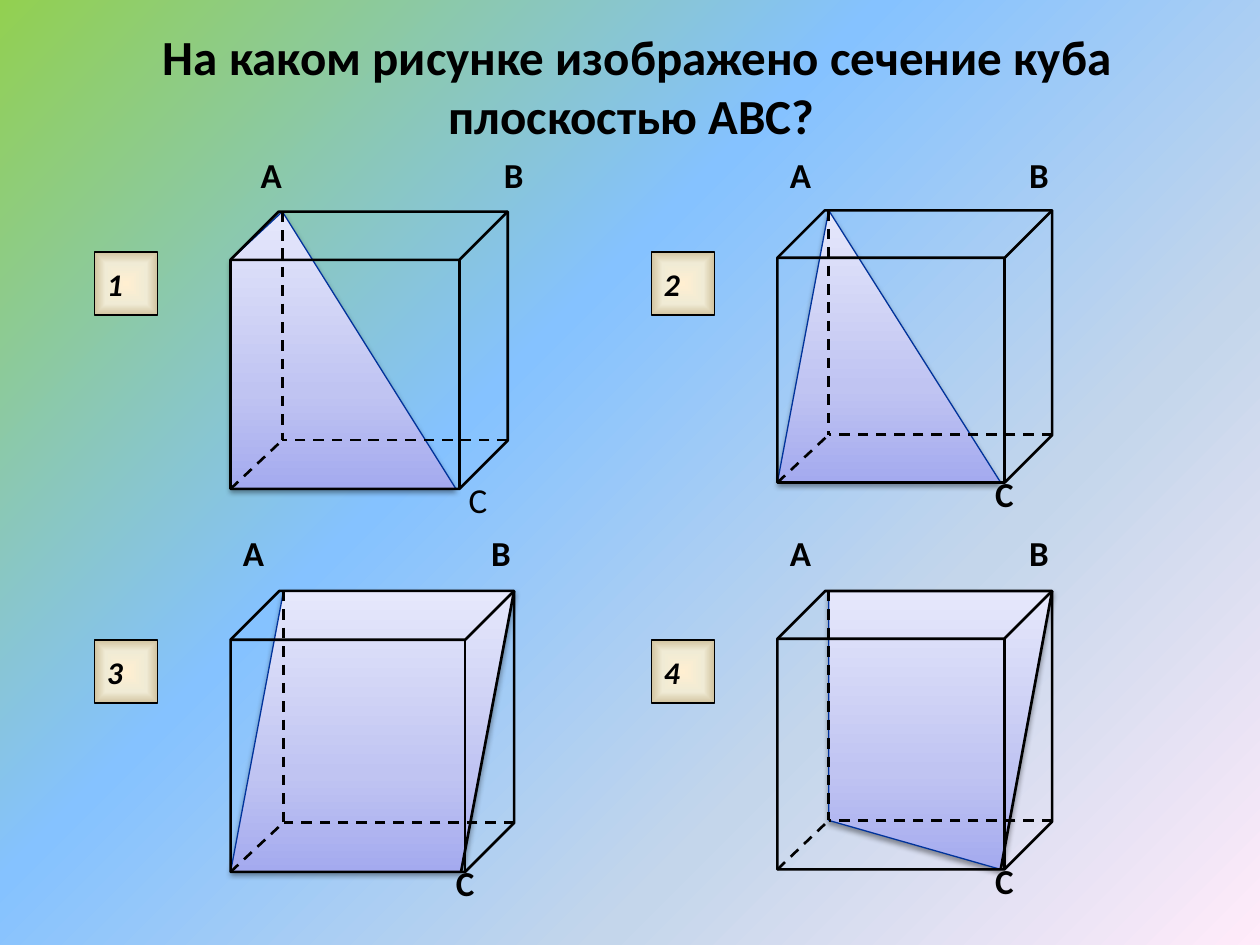
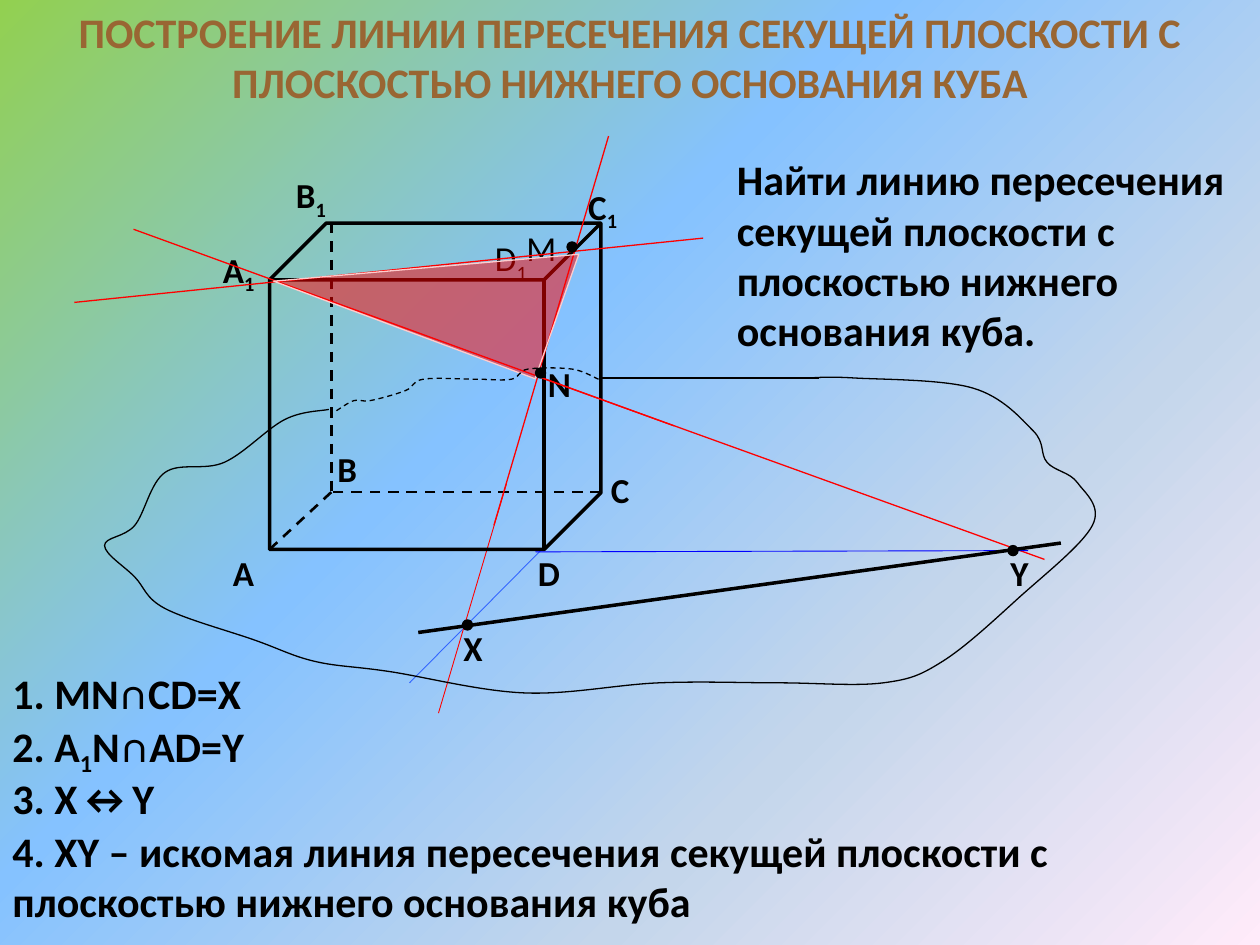
from dataclasses import dataclass
from typing import Iterable, NamedTuple, Optional

import pptx
import pptx.dml.color
import pptx.enum.dml
import pptx.enum.shapes
import pptx.enum.text
import pptx.oxml.ns
import pptx.util
from lxml import etree

Inches = pptx.util.Inches
Pt = pptx.util.Pt
qn = pptx.oxml.ns.qn
MSO = pptx.enum.shapes.MSO_SHAPE
ALIGN = pptx.enum.text.PP_ALIGN

FONT = "Calibri"
COLORS = {
    "ink": "000000", "brown": "996633", "red": "FF0000", "pink": "FFCCCC",
    "blue": "0000FF", "sky": "3366FF", "navy": "00339B",
}
PAGE = [(0, "92D050"), (40, "85C2FF"), (70, "C4D6EB"), (100, "FFEBFA")]
LILAC = [(0, "A4AAEF"), (35, "C0C4F2"), (100, "E6E8FB")]
SAND = [(0, "FFEFD1"), (65, "F0EBD5"), (100, "D1C39F")]


class Point(NamedTuple):
    x: float
    y: float


class Label(NamedTuple):
    text: str
    x: float
    y: float
    bold: bool = True
    width: float = 0.82


class Stroke(NamedTuple):
    start: Point
    end: Point
    color: str = "ink"
    width: float = 1.5
    dash: bool = False


@dataclass
class Cube:
    x: float
    y: float
    w: float
    h: float

    def corners(self) -> dict[str, Point]:
        """Corners by letter: A, B back top; C, E front bottom; F front top; G, H back bottom."""
        shift = 0.187 * self.w
        right, base = self.x + self.w, self.y + self.h
        low = base - 0.176 * self.h
        return {
            "A": Point(self.x + shift, self.y), "B": Point(right, self.y),
            "C": Point(right - shift, base), "E": Point(self.x, base),
            "F": Point(self.x, self.y + 0.174 * self.h),
            "G": Point(self.x + shift, low), "H": Point(right, low),
        }


@dataclass
class Task:
    number: str
    button: Point
    cube: Cube
    section: str
    labels: list[Label]
    edge: bool = False


def rgb(name: str):
    return pptx.dml.color.RGBColor.from_string(COLORS[name])


def add_node(parent, tag: str, **attrs):
    return etree.SubElement(parent, qn(tag), {k: str(v) for k, v in attrs.items()})


def blend(fill, root, stops: list, angle: Optional[int] = None) -> None:
    """Gradient fill; without an angle it runs from the centre to the sides."""
    fill.gradient()
    grad = root.find(".//" + qn("a:gradFill"))
    for child in list(grad):
        grad.remove(child)
    group = add_node(grad, "a:gsLst")
    for place, color in stops:
        stop = add_node(group, "a:gs", pos=place * 1000)
        add_node(stop, "a:srgbClr", val=color)
    if angle is None:
        route = add_node(grad, "a:path", path="rect")
        add_node(route, "a:fillToRect", l=50000, t=50000, r=50000, b=50000)
    else:
        add_node(grad, "a:lin", ang=angle * 60000, scaled=0)


def set_line(shape, color: str, width: float, dash: bool = False) -> None:
    shape.line.color.rgb = rgb(color)
    shape.line.width = Pt(width)
    if dash:
        shape.line.dash_style = pptx.enum.dml.MSO_LINE.DASH


def write(frame, text: str, size: float, color: str = "ink", bold: bool = True,
          italic: bool = False, align=ALIGN.LEFT) -> None:
    """Fill a frame; every second part between underscores is a subscript."""
    para = frame.paragraphs[0]
    para.alignment = align
    style = {"name": FONT, "size": Pt(size), "bold": bold, "italic": italic}
    for i, part in enumerate(text.split("_")):
        if not part:
            continue
        run = para.add_run()
        run.text = part
        for key, value in style.items():
            setattr(run.font, key, value)
        run.font.color.rgb = rgb(color)
        if i % 2:
            run.font._element.set("baseline", "-25000")


def add_text(slide, box: tuple, text: str, size: float, **style) -> None:
    frame = slide.shapes.add_textbox(*map(Inches, box)).text_frame
    frame.word_wrap = True
    frame.auto_size = pptx.enum.text.MSO_AUTO_SIZE.SHAPE_TO_FIT_TEXT
    write(frame, text, size, **style)


def add_label(slide, label: Label) -> None:
    add_text(slide, (label.x, label.y, label.width, 0.43), label.text, 20, bold=label.bold)


def add_stroke(slide, stroke: Stroke) -> None:
    ends = map(Inches, (*stroke.start, *stroke.end))
    line = slide.shapes.add_connector(pptx.enum.shapes.MSO_CONNECTOR.STRAIGHT, *ends)
    set_line(line, stroke.color, stroke.width, stroke.dash)
    add_node(line._element.spPr, "a:effectLst")


def add_cube(slide, cube: Cube, width: float) -> None:
    box = map(Inches, (cube.x, cube.y, cube.w, cube.h))
    shape = slide.shapes.add_shape(MSO.CUBE, *box)
    shape.adjustments[0] = 0.174
    shape.shadow.inherit = False
    shape.fill.background()
    set_line(shape, "ink", width)
    spot = cube.corners()
    for end in "HEA":
        add_stroke(slide, Stroke(spot[end], spot["G"], dash=True))


def add_shape(slide, points: Iterable[Point], closed: bool = True):
    first, *rest = [tuple(map(Inches, point)) for point in points]
    pen = slide.shapes.build_freeform(*first)
    pen.add_line_segments(rest, close=closed)
    shape = pen.convert_to_shape()
    shape.shadow.inherit = False
    return shape


def add_curve(slide, knots: list, dash: bool = False) -> None:
    """Smooth curve: each handle is a sixth of the span between a knot's neighbours."""
    ends = [knots[0], *knots, knots[-1]]
    points = [knots[0]]
    for a, b, c, d in zip(ends, ends[1:], ends[2:], ends[3:]):
        points += [(b[0] + (c[0] - a[0]) / 6, b[1] + (c[1] - a[1]) / 6),
                   (c[0] - (d[0] - b[0]) / 6, c[1] - (d[1] - b[1]) / 6), c]
    shape = add_shape(slide, points, closed=False)
    shape.fill.background()
    set_line(shape, "ink", 0.75, dash)
    steps = list(shape._element.iter(qn("a:lnTo")))
    for bend, *others in zip(steps[::3], steps[1::3], steps[2::3]):
        bend.tag = qn("a:cubicBezTo")
        for other in others:
            bend.append(other[0])
            other.getparent().remove(other)


def add_section(slide, points: list) -> None:
    shape = add_shape(slide, points)
    blend(shape.fill, shape._element, LILAC, 270)
    set_line(shape, "navy", 0.75)
    effects = shape._element.spPr.find(qn("a:effectLst"))
    shade = add_node(effects, "a:outerShdw", blurRad=Pt(3.1), dist=Pt(1.6),
                     dir=5400000, rotWithShape=0)
    add_node(add_node(shade, "a:srgbClr", val=COLORS["ink"]), "a:alpha", val=38000)


def add_button(slide, text: str, spot: Point) -> None:
    shape = slide.shapes.add_shape(MSO.ACTION_BUTTON_CUSTOM, *map(Inches, (*spot, 0.5, 0.5)))
    shape.shadow.inherit = False
    blend(shape.fill, shape._element, SAND)
    set_line(shape, "ink", 0.75)
    shape.text_frame.word_wrap = False
    write(shape.text_frame, text, 18, italic=True)


def add_dot(slide, x: float, y: float) -> None:
    dot = slide.shapes.add_shape(MSO.FLOWCHART_CONNECTOR, *map(Inches, (x, y, 0.08, 0.08)))
    dot.shadow.inherit = False
    dot.fill.solid()
    dot.fill.fore_color.rgb = rgb("ink")
    set_line(dot, "ink", 0.75)


def draw_task(slide, task: Task) -> None:
    spot = task.cube.corners()
    add_section(slide, [spot[name] for name in task.section])
    add_cube(slide, task.cube, 1.5)
    if task.edge:
        add_stroke(slide, Stroke(spot["B"], spot["C"]))
    for label in task.labels:
        add_label(slide, label)
    add_button(slide, task.number, task.button)


def draw_quiz(slide) -> None:
    add_text(slide, (0.39, 0.16, 9.33, 1.04),
             "На каком рисунке изображено сечение куба плоскостью ABC? ", 28, align=ALIGN.CENTER)
    left, right, top, low = 0.75, 5.17, 2, 5.08
    tasks = [
        Task("1", Point(left, top), Cube(1.83, 1.68, 2.2, 2.2), "ACEF",
             [Label("A", 1.97, 1.17), Label("B", 3.9, 1.17), Label("C", 3.62, 3.75, False)]),
        Task("2", Point(right, top), Cube(6.17, 1.67, 2.18, 2.16), "EAC",
             [Label("A", 6.17, 1.17), Label("B", 8.07, 1.17), Label("C", 7.8, 3.7)]),
        Task("3", Point(left, low), Cube(1.83, 4.69, 2.25, 2.23), "EABC",
             [Label("A", 1.83, 4.17), Label("B", 3.8, 4.17), Label("C", 3.52, 6.79)], True),
        Task("4", Point(right, low), Cube(6.17, 4.69, 2.18, 2.21), "GABC",
             [Label("A", 6.17, 4.17), Label("B", 8.07, 4.17), Label("C", 7.8, 6.77)], True),
    ]
    for task in tasks:
        draw_task(slide, task)


def draw_trace(slide) -> None:
    """Trace of the cutting plane on the plane of the lower base."""
    add_text(slide, (0, 0, 10, 0.91),
             "ПОСТРОЕНИЕ ЛИНИИ ПЕРЕСЕЧЕНИЯ СЕКУЩЕЙ ПЛОСКОСТИ С ПЛОСКОСТЬЮ НИЖНЕГО ОСНОВАНИЯ КУБА",
             24, color="brown", align=ALIGN.CENTER)
    add_stroke(slide, Stroke(Point(4.33, 4.33), Point(3.25, 5.42), "sky", 0.5))
    add_stroke(slide, Stroke(Point(4.02, 3.84), Point(3.48, 5.66), "red", 0.5))
    add_cube(slide, Cube(2.14, 1.77, 2.63, 2.59), 2)
    labels = [
        Label("A", 1.75, 4.33), Label("B", 2.58, 3.5), Label("C", 4.75, 3.67),
        Label("D", 4.17, 4.33), Label("A_1", 1.67, 1.92), Label("B_1", 2.25, 1.33),
        Label("C_1", 4.57, 1.42), Label("D_1", 3.83, 1.83, False, 0.9),
        Label("N", 4.25, 2.83), Label("M", 4.08, 1.75, False, 0.9),
        Label("X", 3.58, 4.92, width=0.42), Label("Y", 7.92, 4.33, width=0.42),
    ]
    for label in labels:
        add_label(slide, label)
    for start, end in [((0.59, 2.4), (5.58, 1.89)), ((1.06, 1.82), (5.35, 3.38)),
                       ((4.83, 1.08), (3.92, 4.17)), ((4.3, 3), (8.29, 4.44))]:
        add_stroke(slide, Stroke(Point(*start), Point(*end), "red", 0.75))

    plane = add_shape(slide, [Point(4.59, 2.01), Point(4.25, 3), Point(2.17, 2.24)])
    plane.rotation = 0.4
    plane.fill.solid()
    plane.fill.fore_color.rgb = rgb("red")
    tint = plane._element.spPr.find(qn("a:solidFill"))[0]
    add_node(tint, "a:alpha", val=50000)
    set_line(plane, "pink", 0.75)

    add_curve(slide, [
        (2.61, 3.25), (2.26, 3.33), (1.78, 3.67), (1.31, 3.75), (1.07, 4.17), (0.83, 4.33),
        (1.07, 4.58), (1.31, 4.83), (2.02, 5.08), (2.5, 5.25), (3.09, 5.33), (4.16, 5.5),
        (5.23, 5.42), (6.18, 5.42), (7.01, 5.42), (7.48, 5.25), (8.08, 4.75), (8.67, 4.17),
        (8.55, 3.83), (8.31, 3.67), (8.2, 3.42), (7.72, 3.08), (6.77, 3), (6.41, 3)])
    add_curve(slide, [
        (2.67, 3.26), (2.81, 3.18), (2.94, 3.18), (3.22, 3.1), (3.36, 3.01), (3.78, 3.01),
        (4.06, 3.01), (4.19, 2.93), (4.54, 2.93), (4.75, 3.01)], dash=True)
    add_stroke(slide, Stroke(Point(6.5, 3), Point(4.75, 3), width=0.75))
    add_stroke(slide, Stroke(Point(4.25, 4.38), Point(8.16, 4.37), "blue", 0.5))
    add_stroke(slide, Stroke(Point(3.32, 5.02), Point(8.42, 4.31), width=2))
    for x, y in [(4.25, 2.92), (4.5, 1.92), (3.67, 4.92), (8, 4.33)]:
        add_dot(slide, x, y)

    add_text(slide, (5.75, 1.17, 4.25, 1.72),
             "Найти линию пересечения секущей плоскости с плоскостью нижнего основания куба.", 24)
    steps = [
        (2.92, 0.5, "1. MN∩CD=X"), (3.25, 0.5, "2. A_1_N∩AD=Y"), (3.67, 0.5, "3. X↔Y"),
        (8.83, 0.91, "4. XY – искомая линия пересечения секущей плоскости с "
                     "плоскостью нижнего основания куба"),
    ]
    for i, (width, height, text) in enumerate(steps):
        add_text(slide, (0, 5.25 + i * 1.25 / 3, width, height), text, 24)


def main() -> None:
    deck = pptx.Presentation()
    deck.slide_width, deck.slide_height = Inches(10), Inches(7.5)
    master = deck.slide_master
    blend(master.background.fill, master._element, PAGE, 45)
    for draw in (draw_quiz, draw_trace):
        draw(deck.slides.add_slide(deck.slide_layouts[6]))
    deck.save("out.pptx")


if __name__ == "__main__":
    main()
